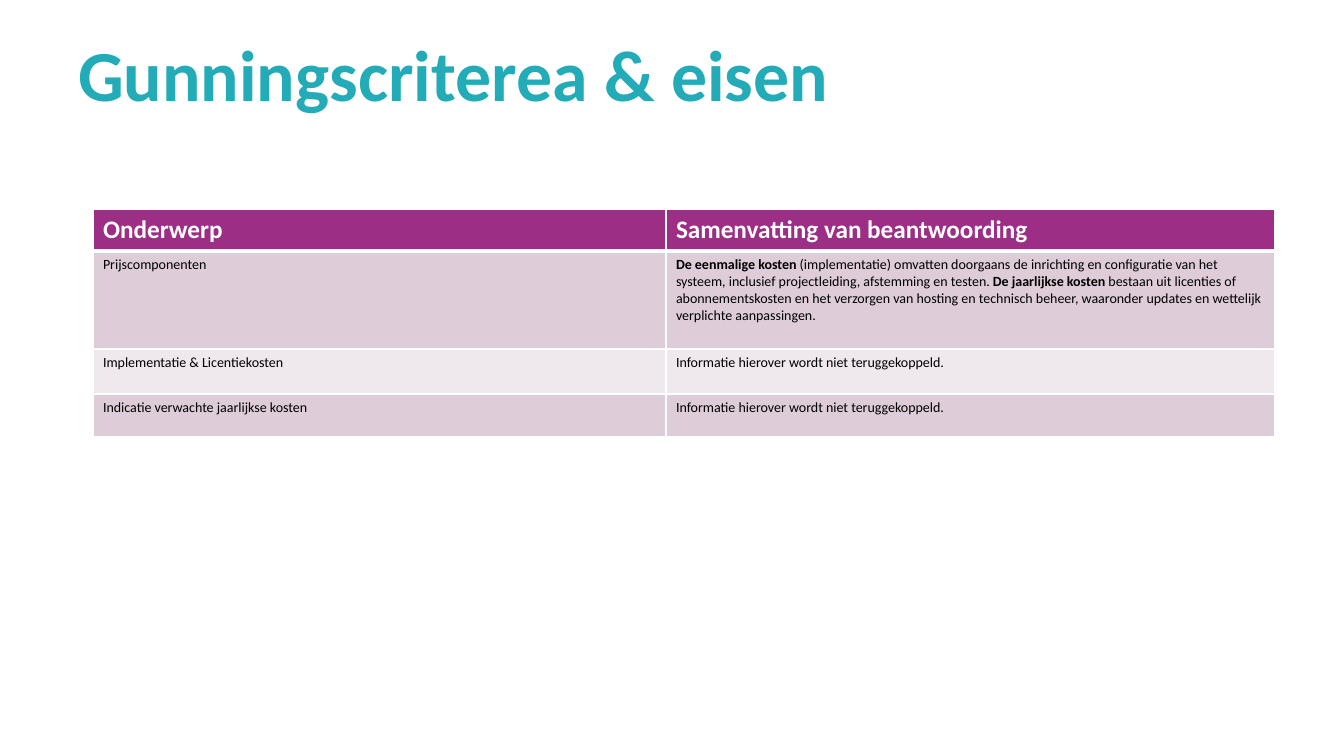
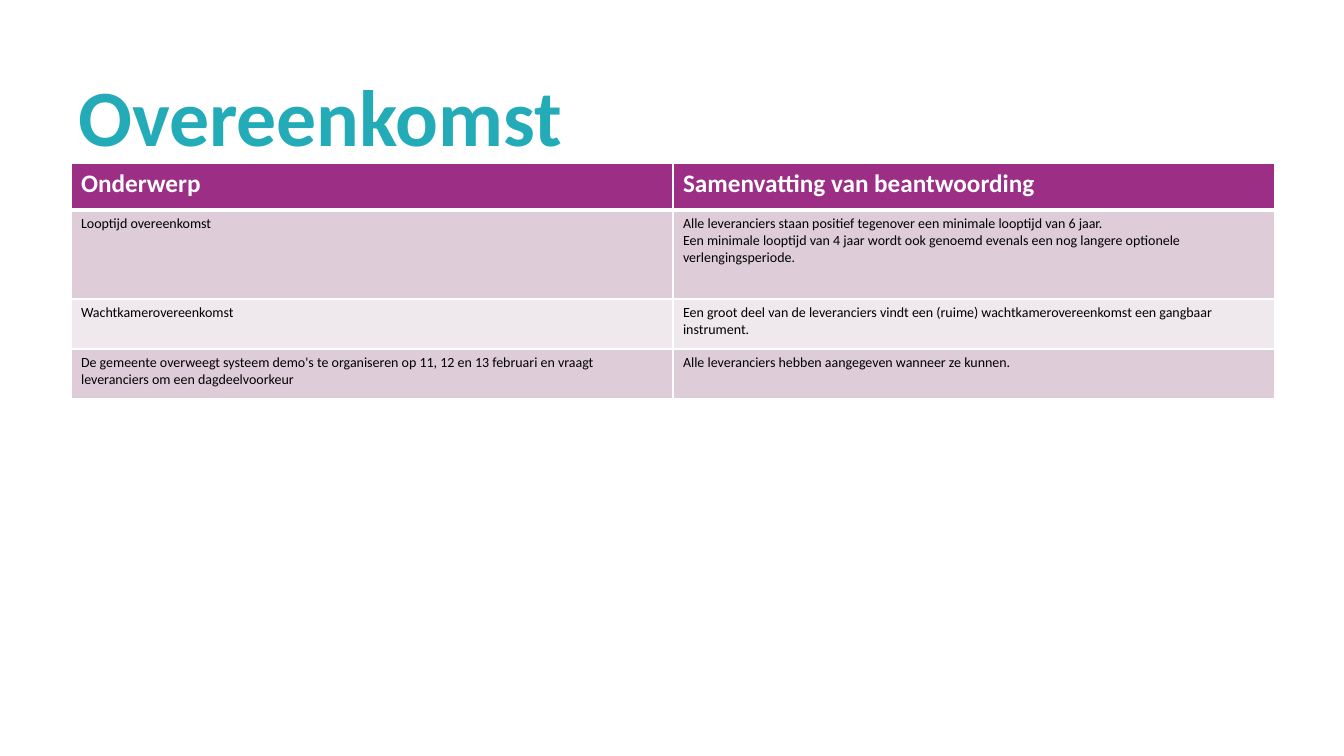
from pptx import Presentation
from pptx.dml.color import RGBColor
from pptx.enum.text import MSO_ANCHOR, MSO_AUTO_SIZE, PP_ALIGN
from pptx.oxml.ns import qn
from pptx.util import Pt
from lxml.etree import SubElement

PX = 9071.43
TEAL, PURPLE, WHITE, BLACK = "23ABB7", "9C2F85", "FFFFFF", "000000"
BANDS = ["DECDD9", "EFE8ED"]
HEADER = ("Onderwerp", "Samenvatting van beantwoording")

slides = [
    dict(
        title="Gunningscriterea & eisen", size=51.3, title_top=25,
        left=93, top=209, cols=[573, 609], heights=[42, 98, 45, 43],
        rows=[
            ("Prijscomponenten",
             "**De eenmalige kosten** (implementatie) omvatten doorgaans de inrichting en "
             "configuratie van het systeem, inclusief projectleiding, afstemming en testen."
             "** De jaarlijkse kosten** bestaan uit licenties of abonnementskosten en het "
             "verzorgen van hosting en technisch beheer, waaronder updates en wettelijk "
             "verplichte aanpassingen."),
            ("Implementatie & Licentiekosten",
             "Informatie hierover wordt niet teruggekoppeld."),
            ("Indicatie verwachte jaarlijkse kosten",
             "Informatie hierover wordt niet teruggekoppeld."),
        ],
    ),
    dict(
        title="Overeenkomst", size=57, title_top=68,
        left=71, top=163, cols=[602, 602], heights=[47, 89, 50, 50],
        rows=[
            ("Looptijd overeenkomst",
             "Alle leveranciers staan positief tegenover een minimale looptijd van 6 jaar.\n"
             "Een minimale looptijd van 4 jaar wordt ook genoemd evenals een nog langere "
             "optionele verlengingsperiode."),
            ("Wachtkamerovereenkomst",
             "Een groot deel van de leveranciers vindt een (ruime) wachtkamerovereenkomst "
             "een gangbaar instrument."),
            ("De gemeente overweegt systeem demo's te organiseren op 11, 12 en 13 februari "
             "en vraagt leveranciers om een dagdeelvoorkeur",
             "Alle leveranciers hebben aangegeven wanneer ze kunnen."),
        ],
    ),
]


def px(n):
    return round(n * PX)


def write(tf, text, size=10, color=BLACK, bold=False, spacing=1.0):
    for i, line in enumerate(text.split("\n")):
        p = tf.add_paragraph() if i else tf.paragraphs[0]
        p.alignment = PP_ALIGN.LEFT
        p.line_spacing = spacing
        for j, part in enumerate(line.split("**")):
            if part:
                r = p.add_run()
                r.text = part
                r.font.name = "Calibri"
                r.font.size = Pt(size)
                r.font.bold = bold or j % 2 == 1
                r.font.color.rgb = RGBColor.from_string(color)


prs = Presentation()
prs.slide_width, prs.slide_height = px(1344), px(756)

for data in slides:
    s = prs.slides.add_slide(prs.slide_layouts[5])
    title = s.shapes.title
    title.left, title.top = px(68), px(data["title_top"])
    title.width, title.height = px(1207), px(106)
    tf = title.text_frame
    tf.auto_size = MSO_AUTO_SIZE.NONE
    tf.vertical_anchor = MSO_ANCHOR.MIDDLE
    write(tf, data["title"], size=data["size"], color=TEAL, bold=True, spacing=0.9)

    cols, heights = data["cols"], data["heights"]
    table = s.shapes.add_table(
        len(heights), len(cols), px(data["left"]), px(data["top"]),
        px(sum(cols)), px(sum(heights))).table
    for col, width in zip(table.columns, cols):
        col.width = px(width)
    for row, height in zip(table.rows, heights):
        row.height = px(height)

    for i, texts in enumerate([HEADER] + data["rows"]):
        for j, text in enumerate(texts):
            cell = table.cell(i, j)
            tcPr = cell._tc.get_or_add_tcPr()
            for side in "LRTB":
                thick = (i, side) in [(0, "B"), (1, "T")]
                ln = SubElement(tcPr, qn("a:ln" + side), w=str(Pt(3 if thick else 1)))
                SubElement(SubElement(ln, qn("a:solidFill")), qn("a:srgbClr"), val=WHITE)
            cell.fill.solid()
            cell.fill.fore_color.rgb = RGBColor.from_string(BANDS[(i - 1) % 2] if i else PURPLE)
            if i:
                write(cell.text_frame, text)
            else:
                write(cell.text_frame, text, size=18, color=WHITE, bold=True)

prs.save("out.pptx")
